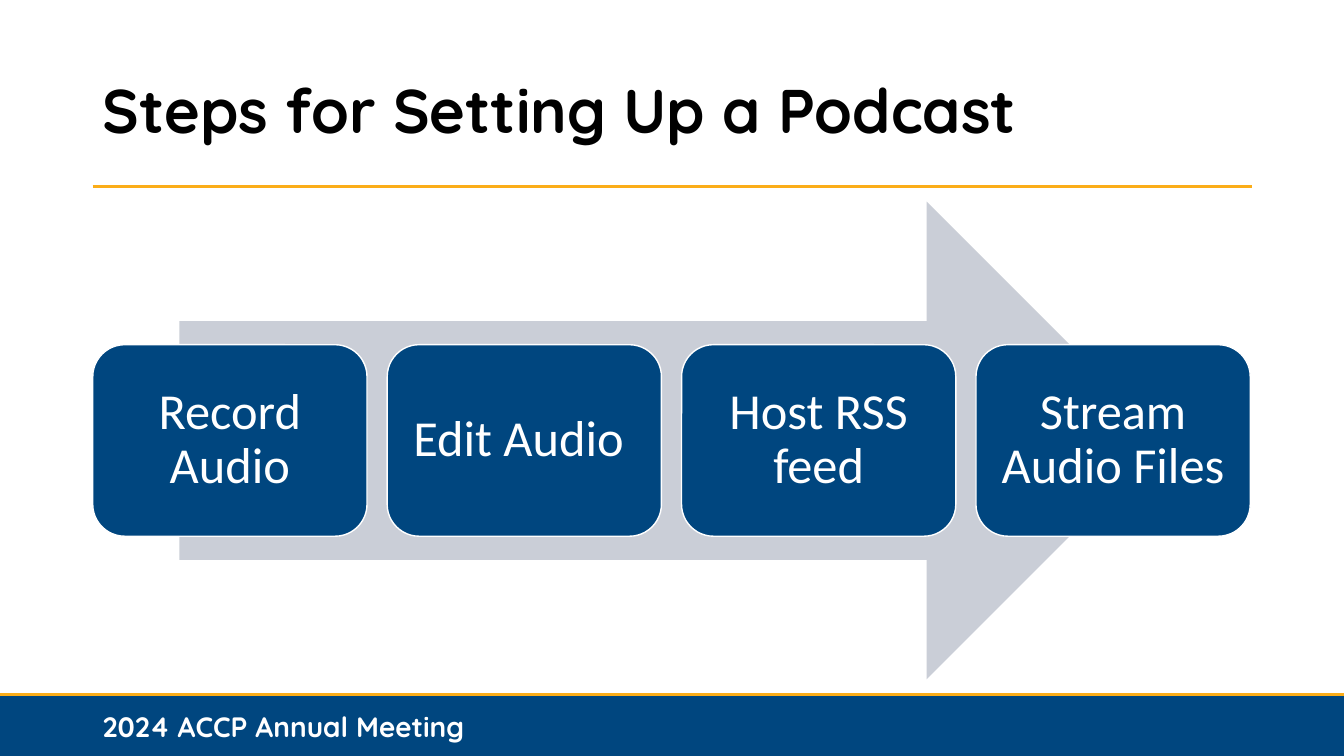
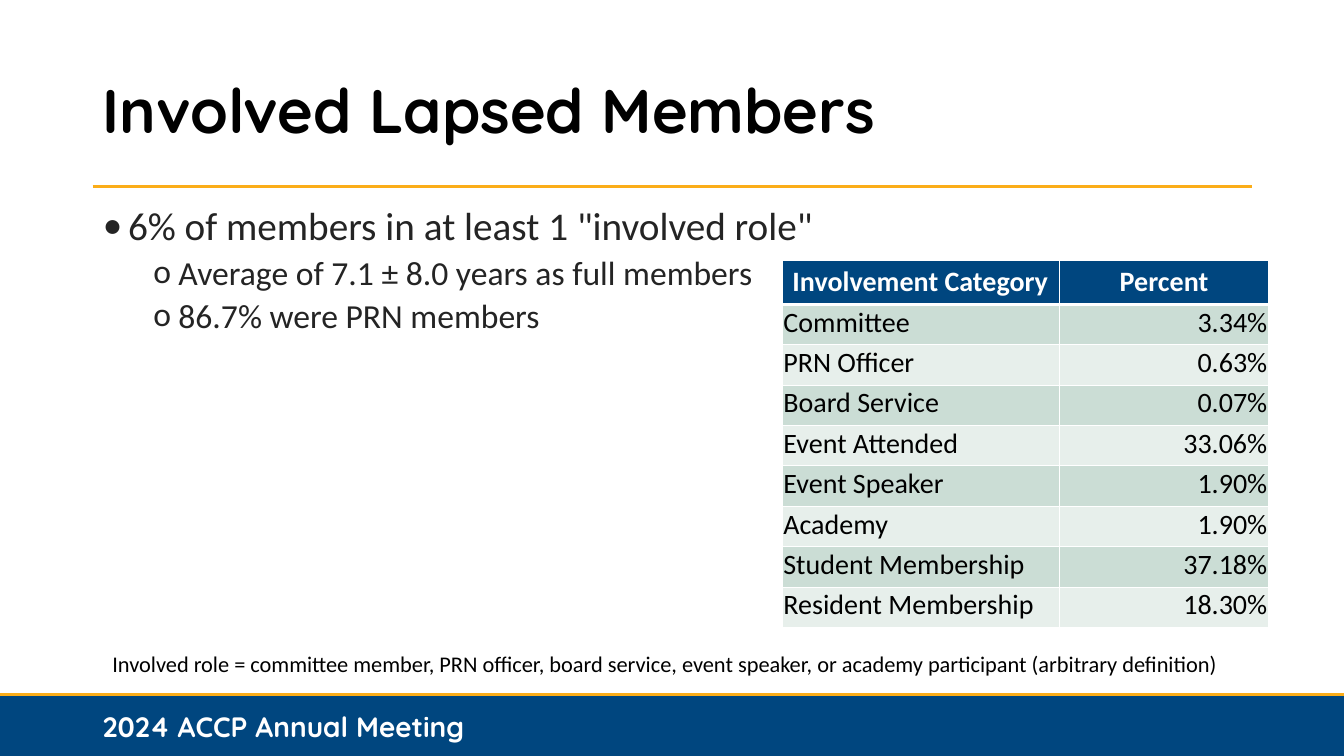
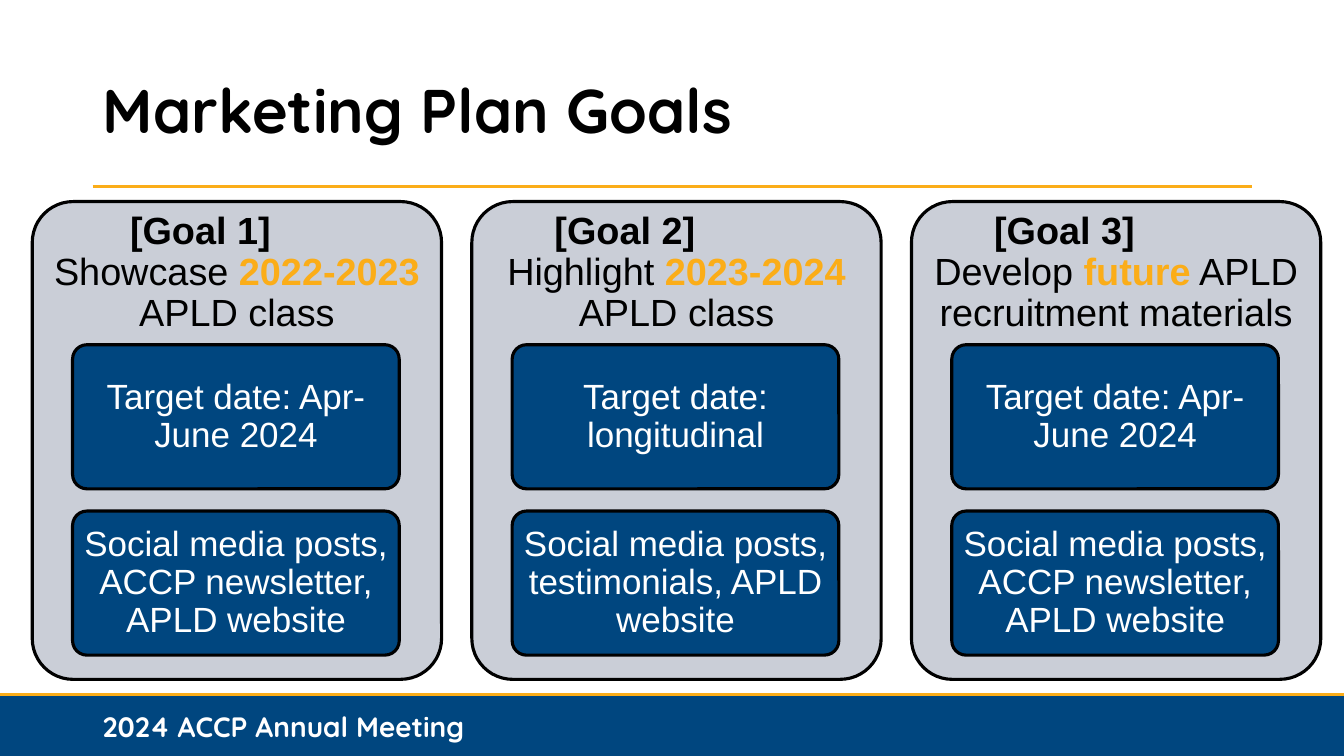
from lxml import etree
from pptx import Presentation
from pptx import util as u
from pptx.dml.color import RGBColor
from pptx.enum import shapes, text
from pptx.oxml.ns import qn

COLORS = {
    "navy": "00467F", "gold": "FBAD18", "gray": "CACED7", "white": "FFFFFF",
    "black": "000000", "ink": "242424", "band_dark": "CBDDD5", "band_light": "E7EFEB",
}
HEADING_FONT, BODY_FONT, CARD_FONT = "Quicksand", "Calibri", "Arial"
LEFT, CENTER, RIGHT = text.PP_ALIGN.LEFT, text.PP_ALIGN.CENTER, text.PP_ALIGN.RIGHT
TOP, MIDDLE, BOTTOM = text.MSO_ANCHOR.TOP, text.MSO_ANCHOR.MIDDLE, text.MSO_ANCHOR.BOTTOM
TITLE_AND_BODY, TITLE_ONLY = 1, 5


def px(length):
    """Convert px to EMU, at 100 px to the inch."""
    return u.Emu(length * 9144)


def rgb(name):
    return RGBColor.from_string(COLORS[name])


class Deck:
    def __init__(self):
        self.presentation = Presentation()
        self.presentation.slide_width = px(1333)
        self.presentation.slide_height = px(750)
        self.slide = None

    def add_slide(self, title, layout=TITLE_ONLY):
        """Start a slide with the shared title, rules and footer band."""
        layouts = self.presentation.slide_layouts
        self.slide = self.presentation.slides.add_slide(layouts[layout])
        heading = self.place(self.slide.shapes.title, 92, 40, 1150, 145)
        self.set_text(heading.text_frame, [title], 44, "black", HEADING_FONT, bold=True,
                      align=LEFT, spacing=0.9)
        self.shape(shapes.MSO_SHAPE.RECTANGLE, (0, 690, 1333, 60), "navy")
        self.rule(0, 1333, 689)
        self.rule(92, 1242, 185)
        self.textbox((92, 701, 818, 40), ["2024 ACCP Annual Meeting"], 20, "white",
                     HEADING_FONT, bold=True, align=LEFT)

    def place(self, shape, left, top, width, height):
        shape.left, shape.top = px(left), px(top)
        shape.width, shape.height = px(width), px(height)
        return shape

    def set_text(self, frame, lines, size, color, font=BODY_FONT, bold=False, align=CENTER,
                 anchor=MIDDLE, inset=(10, 5), spacing=1.0):
        """Fill a frame, one paragraph a line; *starred* words are emphasised."""
        frame.word_wrap = True
        frame.auto_size = text.MSO_AUTO_SIZE.NONE
        frame.vertical_anchor = anchor
        frame.margin_left = frame.margin_right = px(inset[0])
        frame.margin_top = frame.margin_bottom = px(inset[1])
        for index, line in enumerate(lines):
            paragraph = frame.add_paragraph() if index else frame.paragraphs[0]
            paragraph.alignment = align
            paragraph.line_spacing = spacing
            paragraph.space_before = u.Pt(0)
            for part, words in enumerate(line.split("*")):
                run = paragraph.add_run()
                run.text = words
                emphasised = part % 2 == 1
                self.style(run.font, size, "gold" if emphasised else color, font,
                           bold or emphasised)

    def style(self, font, size, color, name, bold):
        font.size, font.name, font.bold = u.Pt(size), name, bold
        font.color.rgb = rgb(color)

    def textbox(self, box, lines, size, color, font=BODY_FONT, **options):
        shape = self.slide.shapes.add_textbox(*map(px, box))
        self.set_text(shape.text_frame, lines, size, color, font, **options)
        return shape

    def shape(self, kind, box, fill, line=None, line_width=1, corner=None):
        shape = self.slide.shapes.add_shape(kind, *map(px, box))
        shape.shadow.inherit = False
        shape.fill.solid()
        shape.fill.fore_color.rgb = rgb(fill)
        if line:
            shape.line.color.rgb = rgb(line)
            shape.line.width = u.Pt(line_width)
        else:
            shape.line.fill.background()
        if corner:
            shape.adjustments[0] = corner
        return shape

    def rounded(self, box, fill, line, line_width, corner):
        return self.shape(shapes.MSO_SHAPE.ROUNDED_RECTANGLE, box, fill, line, line_width,
                          corner)

    def rule(self, left, right, top):
        line = self.slide.shapes.add_connector(
            shapes.MSO_CONNECTOR.STRAIGHT, px(left), px(top), px(right), px(top))
        line.line.color.rgb = rgb("gold")
        line.line.width = u.Pt(2.25)
        etree.SubElement(line._element.spPr, qn("a:effectLst"))

    def bullets(self, box, items):
        """Fill the body placeholder with (level, words) items."""
        body = self.place(self.slide.placeholders[1], *box)
        frame = body.text_frame
        self.set_text(frame, [words for _, words in items], 28, "ink", align=LEFT,
                      anchor=TOP, spacing=0.9)
        for index, (level, _) in enumerate(items):
            paragraph = frame.paragraphs[index]
            paragraph.level = level
            properties = paragraph._p.get_or_add_pPr()
            properties.set("marL", str(px(75 if level else 25)))
            properties.set("indent", str(px(-25)))
            etree.SubElement(properties, qn("a:buFont"), typeface=BODY_FONT)
            etree.SubElement(properties, qn("a:buChar"), char="o" if level else "•")
            paragraph.space_before = u.Pt((5 if level else 10) if index else 0)
            for run in paragraph.runs:
                run.font.size = u.Pt(24 if level else 28)

    def borders(self, cell, **widths):
        """Draw white cell borders; widths are points by side L, R, T, B."""
        properties = cell._tc.get_or_add_tcPr()
        for side, width in widths.items():
            line = etree.SubElement(properties, qn("a:ln" + side), w=str(u.Pt(width)))
            fill = etree.SubElement(line, qn("a:solidFill"))
            etree.SubElement(fill, qn("a:srgbClr"), val=COLORS["white"])

    def table(self, left, top, widths, header_height, row_height, rows):
        height = header_height + row_height * (len(rows) - 1)
        frame = self.slide.shapes.add_table(
            len(rows), len(widths), px(left), px(top), px(sum(widths)), px(height))
        table = frame.table
        for column, width in zip(table.columns, widths):
            column.width = px(width)
        for r, values in enumerate(rows):
            header = r == 0
            table.rows[r].height = px(header_height if header else row_height)
            for c, value in enumerate(values):
                cell = table.cell(r, c)
                self.borders(cell, L=0.77, R=0.77, T=2.33 if r == 1 else 0.77,
                             B=2.33 if header else 0.77)
                cell.fill.solid()
                band = "band_dark" if r % 2 else "band_light"
                cell.fill.fore_color.rgb = rgb("navy" if header else band)
                value_align = CENTER if header else RIGHT
                self.set_text(cell.text_frame, [value], 20, "white" if header else "black",
                              bold=header, align=value_align if c else LEFT)
                cell.vertical_anchor = TOP if header else BOTTOM
                cell.margin_left = cell.margin_right = px(10 if header else 1)
                cell.margin_top = px(5 if header else 1)
                cell.margin_bottom = px(5)

    def goal_card(self, left, heading, heading_indent, summary, details):
        """A tall card: heading and summary above stacked detail boxes."""
        self.rounded((left, 200, 406, 474), "gray", "black", 2.25, 0.1)
        label = self.textbox((left, 200, 406, 142), [heading, summary], 27, "black",
                             CARD_FONT, inset=(11, 11), spacing=0.9)
        first = label.text_frame.paragraphs[0]
        first.alignment = LEFT
        first._p.get_or_add_pPr().set("marL", str(px(heading_indent)))
        first.runs[0].font.bold = True
        for index, detail in enumerate(details):
            box = self.rounded((left + 40, 342 + 165 * index, 324, 143), "navy", "black",
                               2.25, 0.1)
            self.set_text(box.text_frame, [detail], 25, "white", CARD_FONT, inset=(7, 5),
                          spacing=0.9)


def main():
    deck = Deck()

    # Process steps over an arrow
    deck.add_slide("Steps for Setting Up a Podcast")
    deck.shape(shapes.MSO_SHAPE.RIGHT_ARROW, (178, 200, 978, 474), "gray")
    steps = ["Record Audio", "Edit Audio ", "Host RSS feed", "Stream Audio Files"]
    for index, step in enumerate(steps):
        box = deck.rounded((92 + 292 * index, 342, 272, 190), "navy", "white", 1, 0.167)
        deck.set_text(box.text_frame, [step], 36, "white", inset=(15, 15), spacing=0.9)

    # Bullets with a table of involvement
    deck.add_slide("Involved Lapsed Members", TITLE_AND_BODY)
    deck.bullets((92, 200, 1150, 474), [
        (0, '6% of members in at least 1 "involved role"'),
        (1, "Average of 7.1 ± 8.0 years as full members"),
        (1, "86.7% were PRN members"),
    ])
    deck.table(776, 258, (275, 207), 44, 40, [
        ("Involvement Category", "Percent"),
        ("Committee", "3.34%"),
        ("PRN Officer", "0.63%"),
        ("Board Service", "0.07%"),
        ("Event Attended", "33.06%"),
        ("Event Speaker", "1.90%"),
        ("Academy", "1.90%"),
        ("Student Membership", "37.18%"),
        ("Resident Membership", "18.30%"),
    ])
    deck.textbox((0, 633, 1319, 50), [
        "Involved role = committee member, PRN officer, board service, event speaker, "
        "or academy participant (arbitrary definition)"], 16, "black", inset=(10, 10))

    # Goal cards
    deck.add_slide("Marketing Plan Goals")
    spring = "Target date: Apr-June 2024"
    newsletter = "Social media posts, ACCP newsletter, APLD website"
    testimonials = "Social media posts, testimonials, APLD website"
    goals = [
        ("[Goal 1]", 86, "Showcase *2022-2023* APLD class", (spring, newsletter)),
        ("[Goal 2]", 71, "Highlight *2023-2024* APLD class",
         ("Target date: longitudinal", testimonials)),
        ("[Goal 3]", 71, "Develop *future* APLD recruitment materials",
         (spring, newsletter)),
    ]
    for index, goal in enumerate(goals):
        deck.goal_card(32 + 436 * index, *goal)

    deck.presentation.save("out.pptx")


if __name__ == "__main__":
    main()
